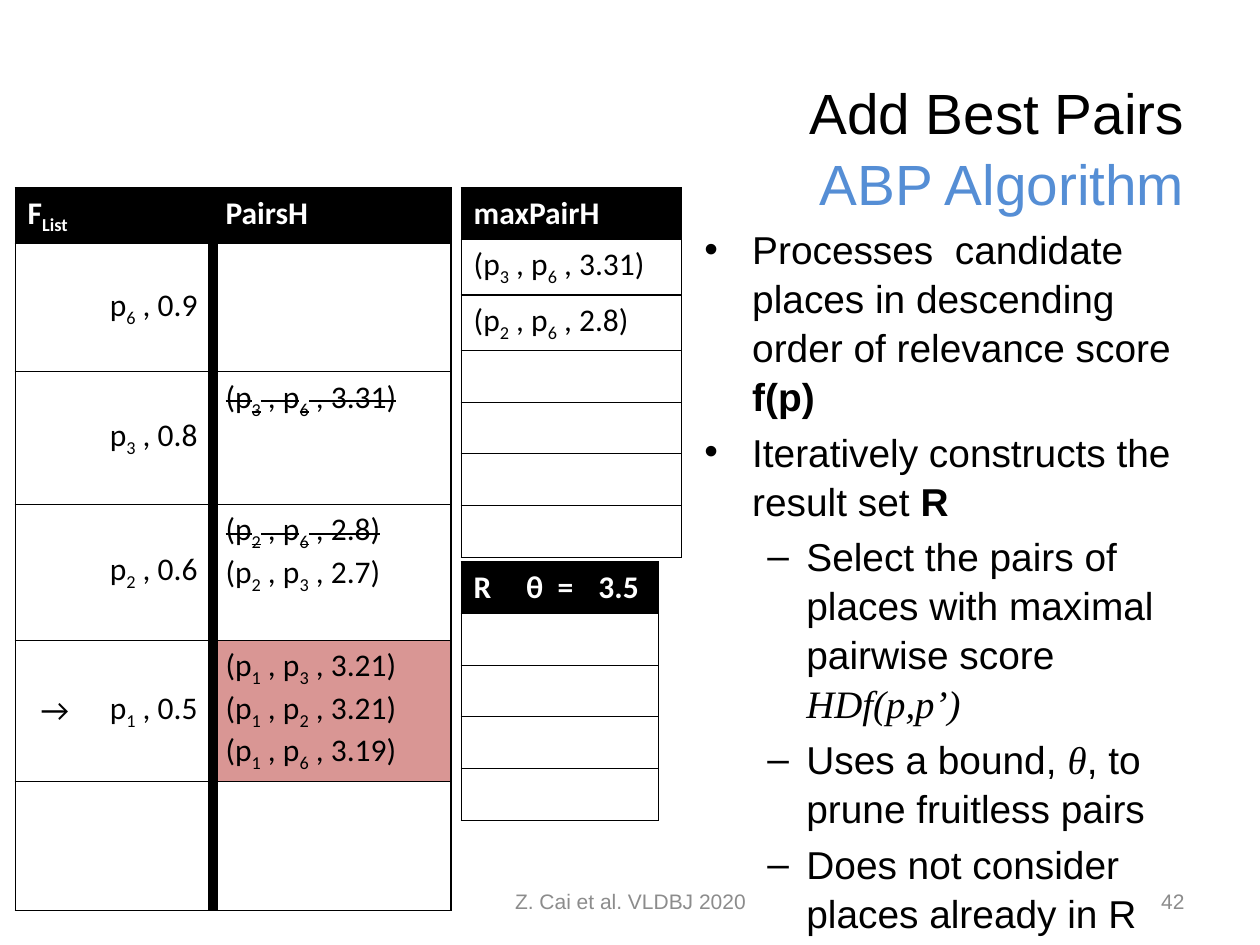
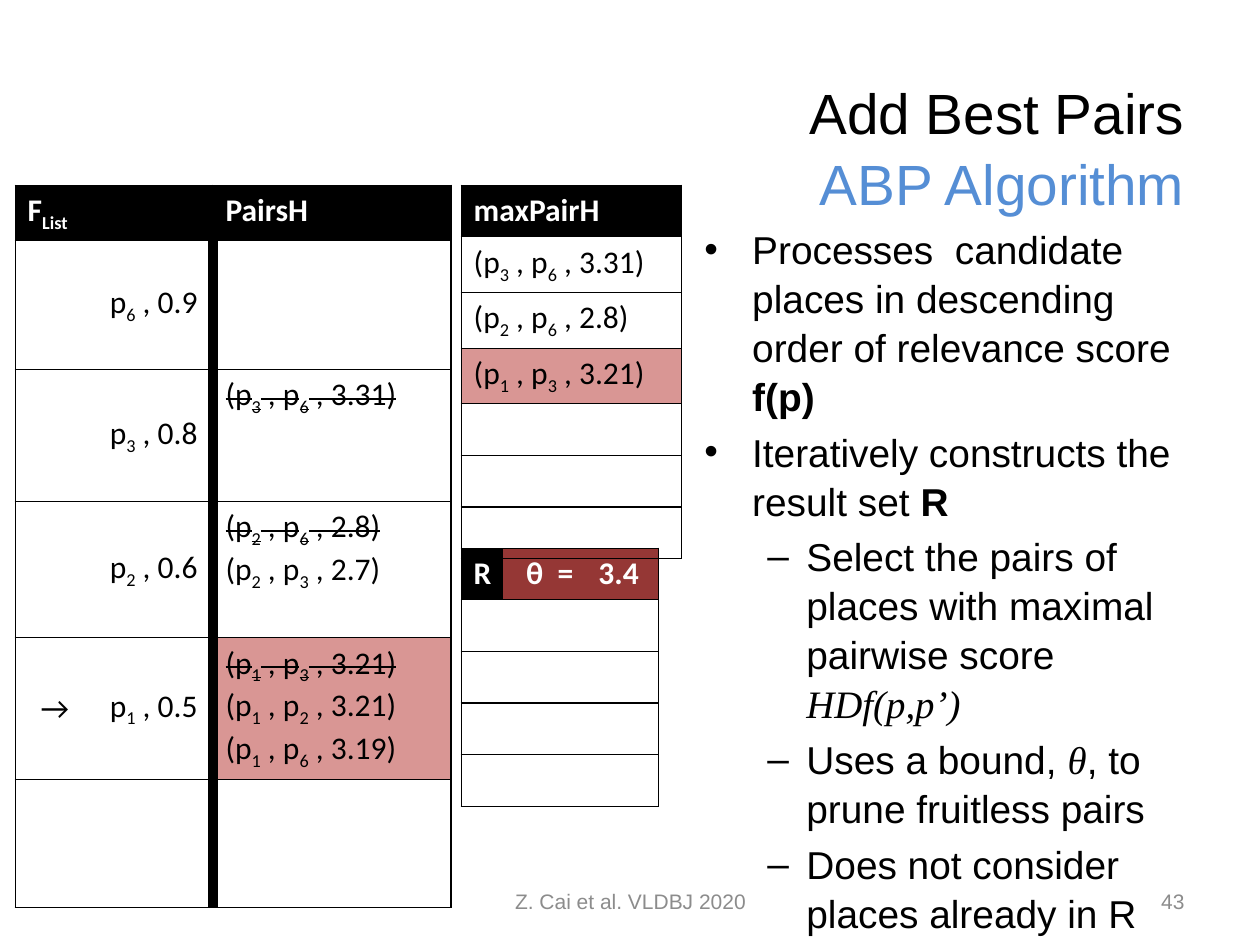
from dataclasses import dataclass

from lxml import etree
from pptx import Presentation, util as u
from pptx.dml.color import RGBColor
from pptx.enum import text as t
from pptx.oxml.ns import qn


@dataclass(frozen=True)
class Theme:
    ink: str = "000000"
    paper: str = "FFFFFF"
    accent: str = "558ED5"
    muted: str = "8C8C8C"
    changed: str = "D99694"
    changed_header: str = "953735"
    sans: str = "Arial"
    table: str = "Calibri"
    formula: str = "Times New Roman"
    title_size: float = 32.4
    body_size: float = 22.2
    table_size: float = 18
    footer_size: float = 12
    leading: float = 1.05
    thin: float = 0.75
    thick: float = 6
    plain_grid: str = "{2D5ABB26-0587-4C30-8999-92F81FD0307C}"


THEME = Theme()
SLIDE_COLUMNS, SLIDE_ROWS = 10, 7.5
COLUMN = ROW = u.Inches(1)
EMPTY_ROW, FILLED_ROW = 0.41, 0.44
RIGHT, CENTER = t.PP_ALIGN.RIGHT, t.PP_ALIGN.CENTER
MIDDLE = t.MSO_ANCHOR.MIDDLE

POINTS = [
    (0, [("Processes  candidate places in descending order of relevance score ", ""), ("f(p)", "bold")]),
    (0, [("Iteratively constructs the result set ", ""), ("R", "bold")]),
    (1, [("Select the pairs of places with maximal pairwise score ", ""), ("HDf(p,p’)", "formula")]),
    (1, [("Uses a bound, ", ""), ("θ", "formula"), (", to prune fruitless pairs", "")]),
    (1, [("Does not consider places already in R", "")]),
]
INDENTS = [(0.38, -0.38), (0.81, -0.31)]


@dataclass
class Step:
    number: int
    top: float
    result_top: float
    theta: str
    theta_fill: str
    best_taken: bool


STEPS = [
    Step(42, 1.49, 4.46, "3.5", THEME.ink, False),
    Step(43, 1.47, 4.35, "3.4", THEME.changed_header, True),
]


def grid(left, top, width, height):
    return [int(n * unit) for n, unit in zip((left, top, width, height), (COLUMN, ROW) * 2)]


def move(shape, *area):
    shape.left, shape.top, shape.width, shape.height = grid(*area)


def add_run(paragraph, words, size, font, color, style=""):
    run = paragraph.add_run()
    run.text = words
    run.font.size = u.Pt(size)
    run.font.name = THEME.formula if "formula" in style else font
    run.font.color.rgb = RGBColor.from_string(color)
    if "bold" in style:
        run.font.bold = True
    if "formula" in style:
        run.font.italic = True
    properties = run.font._element
    if "sub" in style:
        properties.set("baseline", "-25000")
    if "strike" in style:
        properties.set("strike", "sngStrike")


def place(name, score):
    return [[("p", ""), (name, "sub"), (f" , {score}", "")]]


def pair(first, second, score, taken=False):
    parts = [("(p", ""), (first, "sub"), (" , p", ""), (second, "sub"), (f" , {score})", "")]
    return [(words, f"{style} strike" if taken else style) for words, style in parts]


def label(words):
    return [[(words, "")]]


def add_title(slide):
    title = slide.shapes.title
    move(title, 2.17, 0.53, 7.33, 1.25)
    frame = title.text_frame
    frame.auto_size = t.MSO_AUTO_SIZE.NONE
    frame.vertical_anchor = MIDDLE
    heading = frame.paragraphs[0]
    heading.alignment = RIGHT
    heading.line_spacing = THEME.leading
    add_run(heading, "Add Best Pairs", THEME.title_size, THEME.sans, THEME.ink)
    heading.add_line_break()
    add_run(heading, "ABP Algorithm", THEME.title_size, THEME.sans, THEME.accent)


def add_points(slide):
    body = slide.placeholders[1]
    move(body, 5.49, 1.72, 4.23, 5.26)
    frame = body.text_frame
    frame.auto_size = t.MSO_AUTO_SIZE.NONE
    for order, (level, parts) in enumerate(POINTS):
        point = frame.add_paragraph() if order else frame.paragraphs[0]
        point.level = level
        point.line_spacing = THEME.leading
        point.space_before = u.Pt(4 if order else 0)
        margin, indent = INDENTS[level]
        properties = point._p.get_or_add_pPr()
        properties.set("marL", str(u.Inches(margin)))
        properties.set("indent", str(u.Inches(indent)))
        for words, style in parts:
            add_run(point, words, THEME.body_size, THEME.sans, THEME.ink, style)


def add_footer(slide, words, left, width, alignment):
    frame = slide.shapes.add_textbox(*grid(left, 6.95, width, 0.4)).text_frame
    frame.word_wrap = True
    frame.vertical_anchor = MIDDLE
    footer = frame.paragraphs[0]
    footer.alignment = alignment
    add_run(footer, words, THEME.footer_size, THEME.sans, THEME.muted)


def add_grid_table(slide, left, top, widths, heights):
    frame = slide.shapes.add_table(
        len(heights), len(widths), *grid(left, top, sum(widths), sum(heights)))
    table = frame.table
    table.first_row = table.horz_banding = False
    next(frame.element.iter(qn("a:tableStyleId"))).text = THEME.plain_grid
    for column, width in zip(table.columns, widths):
        column.width = int(width * COLUMN)
    for row, height in zip(table.rows, heights):
        row.height = int(height * ROW)
    return table


def draw_borders(cell, sides):
    properties = cell._tc.get_or_add_tcPr()
    for side in "LRTB":
        if side in sides:
            line = etree.SubElement(properties, qn(f"a:ln{side}"), w=str(u.Pt(sides[side])))
            fill = etree.SubElement(line, qn("a:solidFill"))
            etree.SubElement(fill, qn("a:srgbClr"), val=THEME.ink)


def fill_cell(cell, lines=(), fill=None, header=False, alignment=None, anchor=None):
    if fill:
        cell.fill.solid()
        cell.fill.fore_color.rgb = RGBColor.from_string(fill)
    else:
        cell.fill.background()
    if anchor is not None:
        cell.vertical_anchor = anchor
    for order, parts in enumerate(lines):
        line = cell.text_frame.add_paragraph() if order else cell.text_frame.paragraphs[0]
        line.alignment = alignment
        for words, style in parts:
            add_run(line, words, THEME.table_size, THEME.table,
                    THEME.paper if header else THEME.ink, f"{style} bold" if header else style)


def frame_row(table, row, divider=None):
    last = len(table.columns) - 1
    for column in range(last + 1):
        cell = table.cell(row, column)
        sides = {"T": THEME.thin, "B": THEME.thin}
        if column == 0:
            sides["L"] = THEME.thin
        if column == last or cell.is_merge_origin:
            sides["R"] = THEME.thin
        if divider and column == divider - 1:
            sides["R"] = THEME.thick
        if divider and column == divider:
            sides["L"] = THEME.thick
        draw_borders(cell, sides)


def add_result(slide, step):
    table = add_grid_table(slide, 3.66, step.result_top, [0.33, 0.66, 0.58], [EMPTY_ROW] * 5)
    for row in range(5):
        if row:
            table.cell(row, 0).merge(table.cell(row, 2))
        frame_row(table, row)
    headers = [("R", THEME.ink, None), ("θ  =", step.theta_fill, RIGHT),
               (step.theta, step.theta_fill, None)]
    for column, (words, fill, alignment) in enumerate(headers):
        fill_cell(table.cell(0, column), label(words), fill, True, alignment)
    for row in range(1, 5):
        fill_cell(table.cell(row, 0))


def add_candidates(slide, step):
    candidates = [
        (place("6", "0.9"), []),
        (place("3", "0.8"), [pair("3", "6", "3.31", True)]),
        (place("2", "0.6"), [pair("2", "6", "2.8", True), pair("2", "3", "2.7")]),
        (place("1", "0.5"), [pair("1", "3", "3.21", step.best_taken),
                             pair("1", "2", "3.21"), pair("1", "6", "3.19")]),
        ([], []),
    ]
    current = 4
    table = add_grid_table(slide, 0.12, step.top, [0.63, 0.94, 1.89],
                           [FILLED_ROW, 1.02, 1.05, 1.08, 1.12, 1.02])
    table.cell(0, 0).merge(table.cell(0, 1))
    frame_row(table, 0)
    fill_cell(table.cell(0, 0), [[("F", ""), ("List", "sub")]], THEME.ink, True)
    fill_cell(table.cell(0, 2), label("PairsH"), THEME.ink, True)
    for row, (candidate, pairs) in enumerate(candidates, 1):
        frame_row(table, row, divider=2)
        arrow = label("→") if row == current else []
        fill_cell(table.cell(row, 0), arrow, alignment=CENTER, anchor=MIDDLE)
        fill_cell(table.cell(row, 1), candidate, alignment=CENTER, anchor=MIDDLE)
        fill_cell(table.cell(row, 2), pairs, THEME.changed if row == current else None)


def add_best_pairs(slide, step):
    best = [pair("3", "6", "3.31"), pair("2", "6", "2.8")]
    if step.best_taken:
        best.append(pair("1", "3", "3.21"))
    heights = [EMPTY_ROW] + [FILLED_ROW] * len(best) + [EMPTY_ROW] * (6 - len(best))
    table = add_grid_table(slide, 3.66, step.top, [1.75], heights)
    for row in range(len(heights)):
        frame_row(table, row)
        if row == 0:
            fill_cell(table.cell(0, 0), label("maxPairH"), THEME.ink, True)
        else:
            fill_cell(table.cell(row, 0), best[row - 1:row], THEME.changed if row == 3 and step.best_taken else None)


def main():
    deck = Presentation()
    deck.slide_width = int(SLIDE_COLUMNS * COLUMN)
    deck.slide_height = int(SLIDE_ROWS * ROW)
    for step in STEPS:
        slide = deck.slides.add_slide(deck.slide_layouts[1])
        add_title(slide)
        add_footer(slide, str(step.number), 7.17, 2.33, RIGHT)
        add_result(slide, step)
        add_candidates(slide, step)
        add_best_pairs(slide, step)
        add_points(slide)
        add_footer(slide, "Z. Cai et al. VLDBJ 2020", 3.42, 3.17, CENTER)
    deck.save("out.pptx")


if __name__ == "__main__":
    main()
